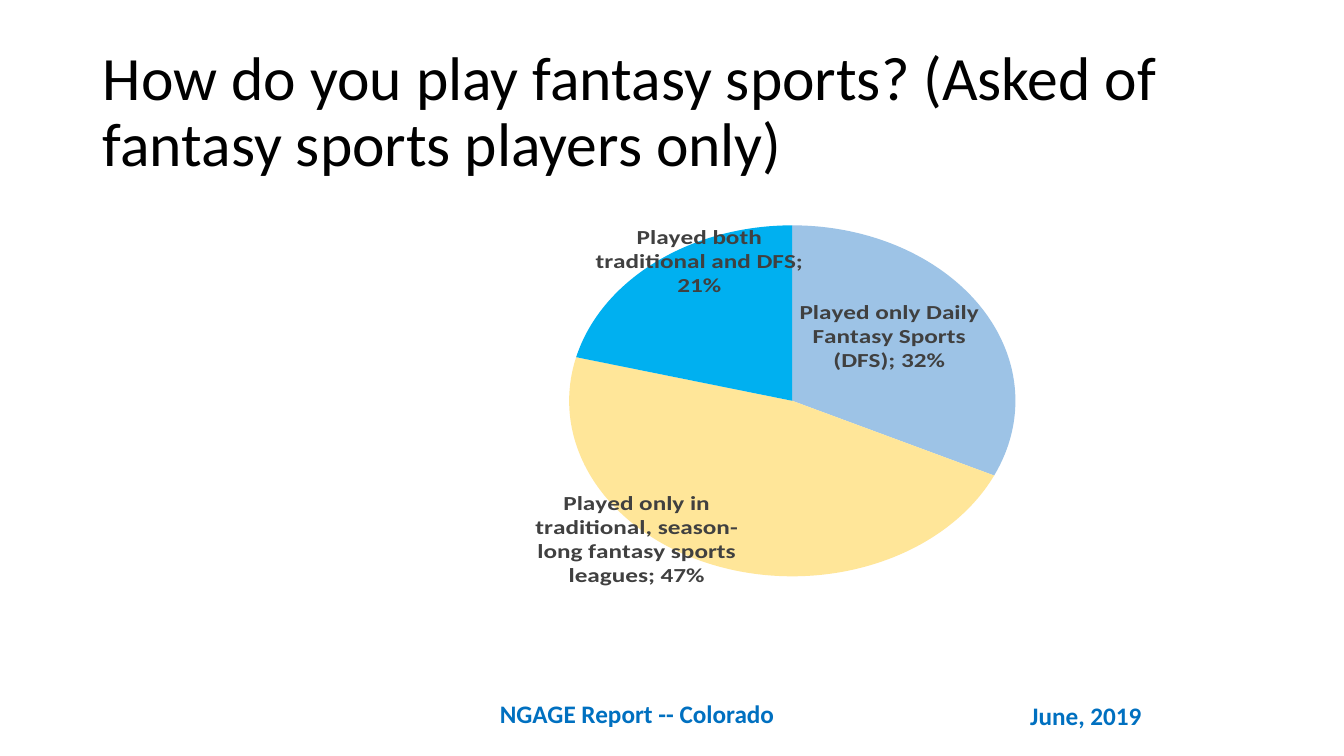
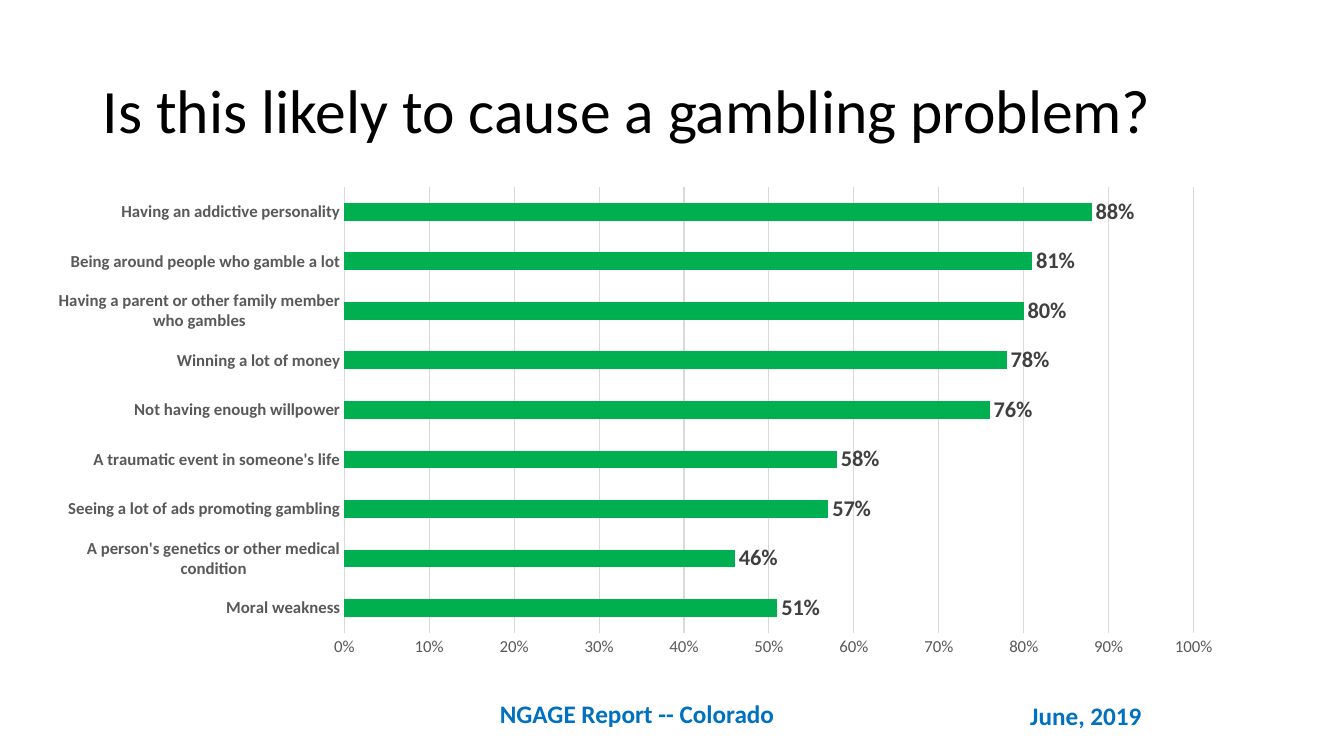
from pptx import Presentation
from pptx.chart.data import CategoryChartData
from pptx.dml.color import RGBColor
from pptx.enum.chart import XL_CHART_TYPE, XL_LABEL_POSITION, XL_TICK_MARK
from pptx.enum.text import MSO_ANCHOR, PP_ALIGN
from pptx.oxml import parse_xml
from pptx.oxml.ns import nsdecls
from pptx.util import Emu, Pt

FONT = "Calibri"
BLACK, FOOTER_BLUE = "000000", "0070C0"
LABEL_GREY, AXIS_GREY, GRID_GREY = "404040", "595959", "D9D9D9"
BAR_GREEN = "00B050"
CHART_BOX = (53, 185, 1154, 476)
FOOTERS = [("June, 2019", 1012, 690, 143), ("NGAGE Report -- Colorado", 486, 688, 360)]
# Colour of each slice and the shift of its label, as shares of the chart size
SLICES = [("9DC3E6", -0.16, 0.18), ("FFE699", 0.02, -0.21), ("00B0F0", 0.13, 0.1)]


def px(*lengths):
    """Turn lengths at 100 px to the inch into EMU."""
    return [Emu(length * 9144) for length in lengths]


def style_font(font, size, colour, bold=False):
    font.name, font.size, font.bold = FONT, Pt(size), bold
    font.color.rgb = RGBColor.from_string(colour)


presentation = Presentation()
presentation.slide_width, presentation.slide_height = px(1333, 750)
layout = presentation.slide_layouts[5]

pie_data = CategoryChartData(number_format="0%")
pie_data.categories = [
    "Played only Daily Fantasy Sports (DFS)",
    "Played only in traditional, season-long fantasy sports leagues",
    "Played both traditional and DFS",
]
pie_data.add_series("Series 1", [0.32, 0.47, 0.21])

causes = [
    ("Moral weakness", 0.51),
    ("A person's genetics or other medical condition", 0.46),
    ("Seeing a lot of ads promoting gambling", 0.57),
    ("A traumatic event in someone's life", 0.58),
    ("Not having enough willpower", 0.76),
    ("Winning a lot of money", 0.78),
    ("Having a parent or other family member who gambles", 0.8),
    ("Being around people who gamble a lot", 0.81),
    ("Having an addictive personality", 0.88),
]
bar_data = CategoryChartData(number_format="0%")
bar_data.categories = [cause for cause, share in causes]
bar_data.add_series("Series 1", [share for cause, share in causes])

# Title, chart type, data, left edge of the plot, label size
pages = [
    ("How do you play fantasy sports? (Asked of fantasy sports players only)",
     XL_CHART_TYPE.PIE, pie_data, 0.36, 18),
    ("Is this likely to cause a gambling problem?",
     XL_CHART_TYPE.BAR_CLUSTERED, bar_data, 0.25, 16),
]
charts = []
for title_text, chart_type, data, plot_left, label_size in pages:
    slide = presentation.slides.add_slide(layout)
    title = slide.shapes.title
    title.left, title.top, title.width, title.height = px(92, 40, 1150, 145)
    title.text_frame.text = title_text
    title.text_frame.vertical_anchor = MSO_ANCHOR.MIDDLE
    paragraph = title.text_frame.paragraphs[0]
    paragraph.alignment = PP_ALIGN.LEFT
    paragraph.line_spacing = 0.9
    style_font(paragraph.runs[0].font, 44, BLACK)

    chart = slide.shapes.add_chart(chart_type, *px(*CHART_BOX), data).chart
    chart.has_legend = chart.has_title = False
    style_font(chart.font, 10, BLACK)
    plot_area = chart.element.chart.plotArea
    for automatic_layout in plot_area.xpath("c:layout"):
        plot_area.remove(automatic_layout)
    plot_area.insert(0, parse_xml(
        f'<c:layout {nsdecls("c")}><c:manualLayout><c:layoutTarget val="inner"/>'
        '<c:xMode val="edge"/><c:yMode val="edge"/>'
        f'<c:x val="{plot_left}"/><c:y val="0"/><c:w val="0.73"/><c:h val="0.93"/>'
        '</c:manualLayout></c:layout>'))

    labels = chart.plots[0].series[0].data_labels
    labels.show_value = True
    labels.show_percentage = False
    labels.show_category_name = chart_type == XL_CHART_TYPE.PIE
    labels.number_format, labels.number_format_is_linked = "0%", False
    labels.position = XL_LABEL_POSITION.OUTSIDE_END
    style_font(labels.font, label_size, LABEL_GREY, bold=True)
    charts.append(chart)

pie_chart, bar_chart = charts
pie_series = pie_chart.plots[0].series[0]
for index, (colour, shift_x, shift_y) in enumerate(SLICES):
    fill = pie_series.points[index].format.fill
    fill.solid()
    fill.fore_color.rgb = RGBColor.from_string(colour)
    pie_series.data_labels._element.insert(index, parse_xml(
        f'<c:dLbl {nsdecls("c")}><c:idx val="{index}"/><c:layout><c:manualLayout>'
        f'<c:x val="{shift_x}"/><c:y val="{shift_y}"/></c:manualLayout></c:layout>'
        '<c:dLblPos val="outEnd"/><c:showLegendKey val="0"/><c:showVal val="1"/>'
        '<c:showCatName val="1"/><c:showSerName val="0"/><c:showPercent val="0"/>'
        '<c:showBubbleSize val="0"/></c:dLbl>'))
    label_font = pie_series.points[index].data_label.font
    style_font(label_font, 18, LABEL_GREY, bold=True)

bar_plot = bar_chart.plots[0]
bar_plot.gap_width = 182
bar_plot.vary_by_categories = False
bar_fill = bar_plot.series[0].format.fill
bar_fill.solid()
bar_fill.fore_color.rgb = RGBColor.from_string(BAR_GREEN)

category_axis, value_axis = bar_chart.category_axis, bar_chart.value_axis
for axis in (category_axis, value_axis):
    axis.major_tick_mark = axis.minor_tick_mark = XL_TICK_MARK.NONE
    style_font(axis.tick_labels.font, 12, AXIS_GREY, bold=axis is category_axis)
value_axis.minimum_scale, value_axis.maximum_scale, value_axis.major_unit = 0, 1, 0.1
value_axis.tick_labels.number_format = "0%"
value_axis.tick_labels.number_format_is_linked = False
value_axis.format.line.fill.background()
value_axis.has_major_gridlines = True
for line in (category_axis.format.line, value_axis.major_gridlines.format.line):
    line.width = Pt(0.75)
    line.color.rgb = RGBColor.from_string(GRID_GREY)

# Footers are drawn once, then moved to the layout that both slides share
for footer_text, left, top, width in FOOTERS:
    footer = slide.shapes.add_textbox(*px(left, top, width, 40))
    footer.text_frame.word_wrap = True
    footer.text_frame.text = footer_text
    style_font(footer.text_frame.paragraphs[0].runs[0].font, 18, FOOTER_BLUE, bold=True)
    layout.shapes.element.append(footer.element)

presentation.save("out.pptx")
